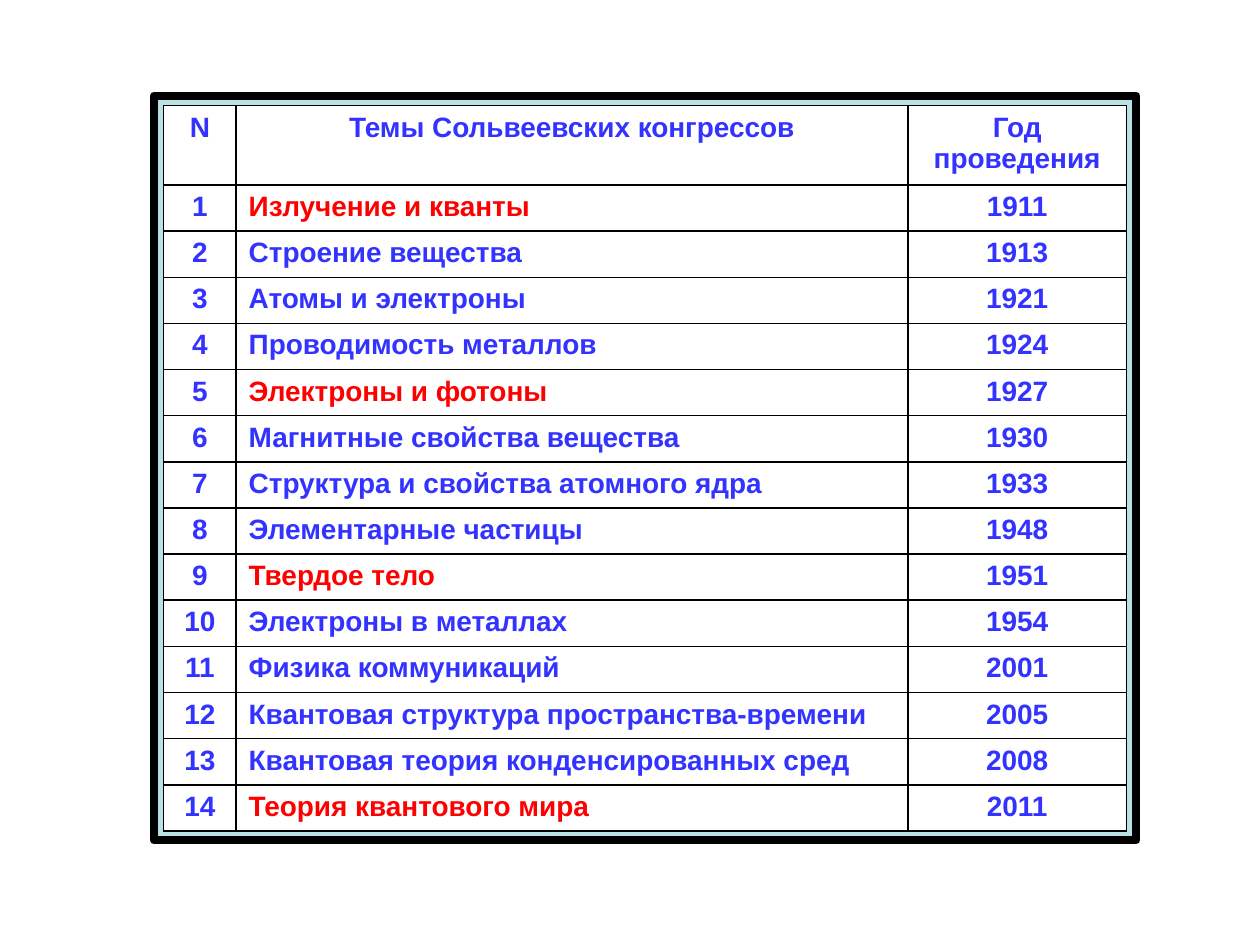
from dataclasses import dataclass

from lxml import etree
from pptx import Presentation, util as u
from pptx.dml.color import RGBColor
from pptx.enum import shapes, text
from pptx.oxml.ns import qn


@dataclass(frozen=True)
class Theme:
    font: str = "Arial"
    size: float = 16
    ink: str = "3333FF"
    accent: str = "FF0000"
    paper: str = "FFFFFF"
    panel: str = "BBE0E3"
    line: str = "000000"
    frame: float = 4.5
    rule: float = 1


class Deck:
    def __init__(self, theme):
        self.theme = theme
        self.prs = Presentation()
        self.prs.slide_width = u.Cm(25.4)
        self.prs.slide_height = u.Cm(19.05)
        self.slide = self.prs.slides.add_slide(self.prs.slide_layouts[6])

    def panel(self, *box):
        rect = self.slide.shapes.add_shape(
            shapes.MSO_SHAPE.RECTANGLE, *map(u.Cm, box))
        rect.shadow.inherit = False
        rect.fill.solid()
        rect.fill.fore_color.rgb = RGBColor.from_string(self.theme.panel)
        rect.line.color.rgb = RGBColor.from_string(self.theme.line)
        rect.line.width = u.Pt(self.theme.frame)

    def border(self, cell):
        props = cell._tc.get_or_add_tcPr()
        for spot, side in enumerate(("lnL", "lnR", "lnT", "lnB")):
            line = etree.Element(qn(f"a:{side}"), w=str(u.Pt(self.theme.rule)))
            fill = etree.SubElement(line, qn("a:solidFill"))
            etree.SubElement(fill, qn("a:srgbClr"), val=self.theme.line)
            props.insert(spot, line)

    def cell(self, cell, words, color, align):
        cell.fill.solid()
        cell.fill.fore_color.rgb = RGBColor.from_string(self.theme.paper)
        self.border(cell)
        para = cell.text_frame.paragraphs[0]
        para.alignment = align
        run = para.add_run()
        run.text = words
        run.font.name = self.theme.font
        run.font.size = u.Pt(self.theme.size)
        run.font.bold = True
        run.font.color.rgb = RGBColor.from_string(color)

    def table(self, left, top, widths, heights, rows, marked):
        grid = self.slide.shapes.add_table(
            len(rows), len(widths), u.Cm(left), u.Cm(top),
            u.Cm(sum(widths)), u.Cm(sum(heights))).table
        grid.first_row = grid.horz_banding = False
        for col, width in zip(grid.columns, widths):
            col.width = u.Cm(width)
        for row, height in zip(grid.rows, heights):
            row.height = u.Cm(height)
        # Topics align left; the header, numbers and years are centred
        for r, row in enumerate(rows):
            for c, words in enumerate(row):
                topic = r > 0 and c == 1
                color = (self.theme.accent if topic and r in marked
                         else self.theme.ink)
                align = (text.PP_ALIGN.LEFT if topic
                         else text.PP_ALIGN.CENTER)
                self.cell(grid.cell(r, c), words, color, align)


HEADER = ("N", "Темы Сольвеевских конгрессов", "Год проведения")
TOPICS = [
    ("Излучение и кванты", "1911"),
    ("Строение вещества", "1913"),
    ("Атомы и электроны", "1921"),
    ("Проводимость металлов", "1924"),
    ("Электроны и фотоны", "1927"),
    ("Магнитные свойства вещества", "1930"),
    ("Структура и свойства атомного ядра", "1933"),
    ("Элементарные частицы", "1948"),
    ("Твердое тело", "1951"),
    ("Электроны в металлах", "1954"),
    ("Физика коммуникаций", "2001"),
    ("Квантовая структура пространства-времени", "2005"),
    ("Квантовая теория конденсированных сред", "2008"),
    ("Теория квантового мира", "2011"),
]
MARKED = {1, 5, 9, 14}


def main():
    deck = Deck(Theme())
    # Framed panel behind the table
    deck.panel(3.1, 1.93, 19.81, 15.01)
    # Numbered list of congresses
    rows = [HEADER] + [(str(n), *item) for n, item in enumerate(TOPICS, 1)]
    heights = [1.6] + [0.93] * len(TOPICS)
    deck.table(3.3, 2.13, (1.46, 13.54, 4.41), heights, rows, MARKED)
    deck.prs.save("out.pptx")


if __name__ == "__main__":
    main()
